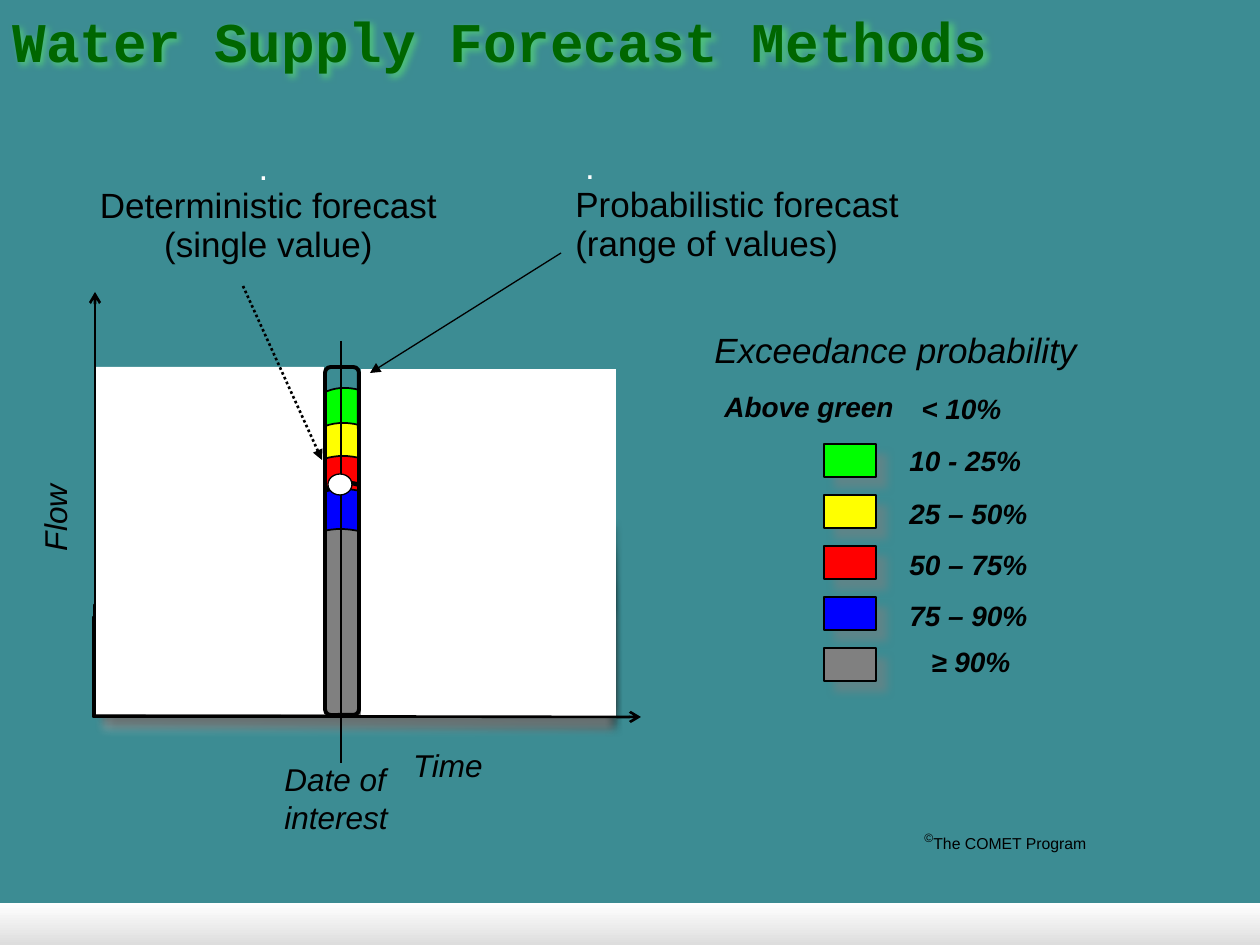
from lxml import etree
from pptx import Presentation
from pptx.dml.color import RGBColor
from pptx.enum.dml import MSO_LINE
from pptx.enum.shapes import MSO_CONNECTOR, MSO_SHAPE
from pptx.enum.text import MSO_ANCHOR, MSO_AUTO_SIZE, PP_ALIGN
from pptx.oxml.ns import qn
from pptx.util import Pt

PX = 914400 / 126
RECT, OVAL, ROUNDED = MSO_SHAPE.RECTANGLE, MSO_SHAPE.OVAL, MSO_SHAPE.ROUNDED_RECTANGLE
LEFT, CENTER = PP_ALIGN.LEFT, PP_ALIGN.CENTER
STRAIGHT = MSO_CONNECTOR.STRAIGHT
DOTTED = MSO_LINE.ROUND_DOT
color = RGBColor.from_string

deck = Presentation()
deck.slide_width, deck.slide_height = round(1260 * PX), round(945 * PX)
page = deck.slides.add_slide(deck.slide_layouts[5])
page.background.fill.solid()
page.background.fill.fore_color.rgb = color("3C8C93")
shapes = page.shapes


def paint(shape, fill=None, line_width=None, shadow=None, blur=5, distance=8.5):
    """Set fill, black outline and a shadow falling to the lower right."""
    if fill:
        shape.fill.solid()
        shape.fill.fore_color.rgb = color(fill)
    else:
        shape.fill.background()
    if line_width:
        shape.line.color.rgb = color("000000")
        shape.line.width = Pt(line_width)
    else:
        shape.line.fill.background()
    shape.shadow.inherit = False
    if shadow:
        effects = shape._element.spPr.find(qn("a:effectLst"))
        outer = etree.SubElement(effects, qn("a:outerShdw"), blurRad=str(Pt(blur)),
                                 dist=str(Pt(distance)), dir="2700000")
        tone = etree.SubElement(outer, qn("a:srgbClr"), val=shadow)
        etree.SubElement(tone, qn("a:alpha"), val="50000")


def add_text(lines, bounds, size, wrap=True, align=LEFT, spacing=None, **styles):
    box = shapes.add_textbox(*(round(v * PX) for v in bounds))
    box.text_frame.word_wrap = wrap
    for number, line in enumerate(lines):
        para = box.text_frame.paragraphs[0] if number == 0 else box.text_frame.add_paragraph()
        para.alignment = align
        if spacing:
            para.line_spacing = spacing
        if number:
            para.space_before = Pt(10)
        span = para.add_run()
        span.text = line
        font = {"name": "Arial", "size": Pt(size), **styles}
        for name, value in font.items():
            setattr(span.font, name, value)
        span.font.color.rgb = color("FFFFFF" if line.strip() == "." else "000000")
    return box


# Title
title = shapes.title
title.left, title.top, title.width, title.height = 0, 0, deck.slide_width, round(94 * PX)
title.text_frame.text = "Water Supply Forecast Methods"
title.text_frame.auto_size = MSO_AUTO_SIZE.NONE
title.text_frame.vertical_anchor = MSO_ANCHOR.MIDDLE
para = title.text_frame.paragraphs[0]
para.alignment, para.line_spacing = LEFT, 0.75
for name, value in {"name": "Courier New", "size": Pt(32), "bold": True}.items():
    setattr(para.runs[0].font, name, value)
para.runs[0].font.color.rgb = color("006600")
paint(title, shadow="66FF66", blur=4, distance=2)

# Footer band
band = shapes.add_shape(RECT, 0, round(903 * PX), deck.slide_width, round(42 * PX))
paint(band)
band.fill.gradient()
band.fill.gradient_angle = 270
for stop, tone in zip(band.fill.gradient_stops, ("FFFFFF", "DDDDDD")):
    stop.color.rgb = color(tone)

# Probability areas: fill, shadow, Bezier crest from left to right, bottom corners
areas = [
    ("00FF00", "000000",
     [(96, 600), (123, 578), (185, 547), (227, 512), (268, 476), (292, 387), (345, 388),
      (399, 388), (436, 476), (478, 498), (520, 519), (572, 515), (601, 517)],
     [(602, 716), (100, 712)]),
    ("FFFF00", "000000",
     [(94, 605), (122, 586), (184, 562), (226, 532), (266, 501), (290, 422), (344, 423),
      (397, 423), (433, 501), (476, 520), (519, 539), (571, 535), (600, 537)],
     [(601, 713), (94, 712)]),
    ("FF0000", "000000",
     [(96, 606), (123, 591), (184, 571), (224, 547), (266, 522), (290, 456), (343, 456),
      (397, 456), (433, 522), (476, 537), (519, 552), (571, 549), (600, 549)],
     [(601, 697), (96, 694)]),
    ("0000FF", "000000",
     [(97, 610), (125, 596), (184, 591), (224, 571), (266, 551), (290, 489), (344, 489),
      (397, 490), (433, 548), (476, 562), (519, 576), (571, 573), (600, 573)],
     [(601, 704), (96, 702)]),
    ("808080", "C0C0C0",
     [(93, 617), (122, 606), (184, 615), (223, 600), (265, 586), (287, 529), (341, 529),
      (396, 530), (432, 581), (475, 592), (518, 605), (568, 599), (599, 602)],
     [(600, 717), (93, 717)]),
    (None, None,
     [(98, 607), (113, 604), (164, 596), (193, 586), (221, 576), (239, 564), (266, 547),
      (291, 530), (316, 485), (344, 483), (372, 480), (407, 520), (431, 532),
      (455, 542), (470, 538), (488, 547), (504, 556), (515, 576), (534, 585),
      (553, 593), (587, 599), (602, 602)],
     []),
]
for fill, shadow, crest, corners in areas:
    builder = shapes.build_freeform(*crest[0], scale=PX)
    builder.add_line_segments(crest[1:] + corners, close=bool(corners))
    area = builder.convert_to_shape()
    segments = list(area._element.iter(qn("a:lnTo")))[:len(crest) - 1]
    for first in range(0, len(segments), 3):
        curve = etree.Element(qn("a:cubicBezTo"))
        segments[first].addprevious(curve)
        for segment in segments[first:first + 3]:
            curve.append(segment[0])
            segment.getparent().remove(segment)
    paint(area, fill, 1 if fill else 2.5, shadow)

# White plot halves, forecast bar and forecast value
plot_parts = [
    (RECT, (96, 367, 228, 347), "FFFFFF", None),
    (RECT, (361, 369, 255, 347), "FFFFFF", None),
    (ROUNDED, (325, 367, 34, 348), None, 2.25),
]
for kind, bounds, fill, width in plot_parts:
    paint(shapes.add_shape(kind, *(round(v * PX) for v in bounds)), fill, width)

# Axes, date line and pointers: from, to, width, arrowhead at the start, dash
lines = [
    ((95, 292), (95, 715), 1.5, "arrow", None),
    ((641, 717), (93, 716), 1.5, "arrow", None),
    ((341, 341), (341, 763), 0.75, None, None),
    ((322, 460), (243, 286), 1.5, "triangle", DOTTED),
    ((370, 373), (561, 253), 0.75, "triangle", None),
]
for start, end, width, head, dash in lines:
    line = shapes.add_connector(STRAIGHT, *(round(v * PX) for v in start + end))
    line.line.color.rgb = color("000000")
    line.line.width = Pt(width)
    if dash:
        line.line.dash_style = dash
    if head:
        etree.SubElement(line.line._get_or_add_ln(), qn("a:headEnd"), type=head)
    etree.SubElement(line._element.spPr, qn("a:effectLst"))

forecast_value = shapes.add_shape(OVAL, *(round(v * PX) for v in (328, 474, 24, 21)))
paint(forecast_value, "FFFFFF", 0.75)

# Labels
add_text([". ", "Deterministic forecast", "(single value)"], (60, 157, 417, 117), 20,
         align=CENTER, spacing=0.5)
add_text([" .", "Probabilistic forecast", "(range of values)"], (563, 156, 417, 117), 20,
         spacing=0.5)
add_text(["Exceedance probability"], (702, 322, 417, 54), 20, italic=True)
add_text(["Flow"], (-2, 482, 113, 50), 18, italic=True).rotation = 270
add_text(["Time"], (413, 740, 146, 38), 18, italic=True).text_frame.margin_left = 0
add_text(["Date of interest"], (272, 754, 141, 88), 18, italic=True)

# Legend
for label, left, top, width in [
    ("Above green", 712, 383, 195), ("< 10%", 909, 385, 106), ("10 - 25%", 897, 437, 137),
    ("25 – 50%", 897, 490, 144), ("50 – 75%", 897, 541, 144), ("75 – 90%", 897, 592, 144),
    ("≥ 90%", 919, 638, 122),
]:
    add_text([label], (left, top, width, 47), 16, wrap=False, bold=True, italic=True)
for row, fill in enumerate(("00FF00", "FFFF00", "FF0000", "0000FF", "808080")):
    bounds = (824, 444 + row * 51, 52, 33)
    swatch = shapes.add_shape(RECT, *(round(v * PX) for v in bounds))
    paint(swatch, fill, 0.75, "808080")

# Copyright line
credit = add_text(["©"], (912, 822, 270, 32), 12)
para = credit.text_frame.paragraphs[0]
para.runs[0].font._element.set("baseline", "30000")
span = para.add_run()
span.text = "The COMET Program"
span.font.name, span.font.size = "Arial", Pt(9)
span.font.color.rgb = color("000000")

deck.save("out.pptx")
